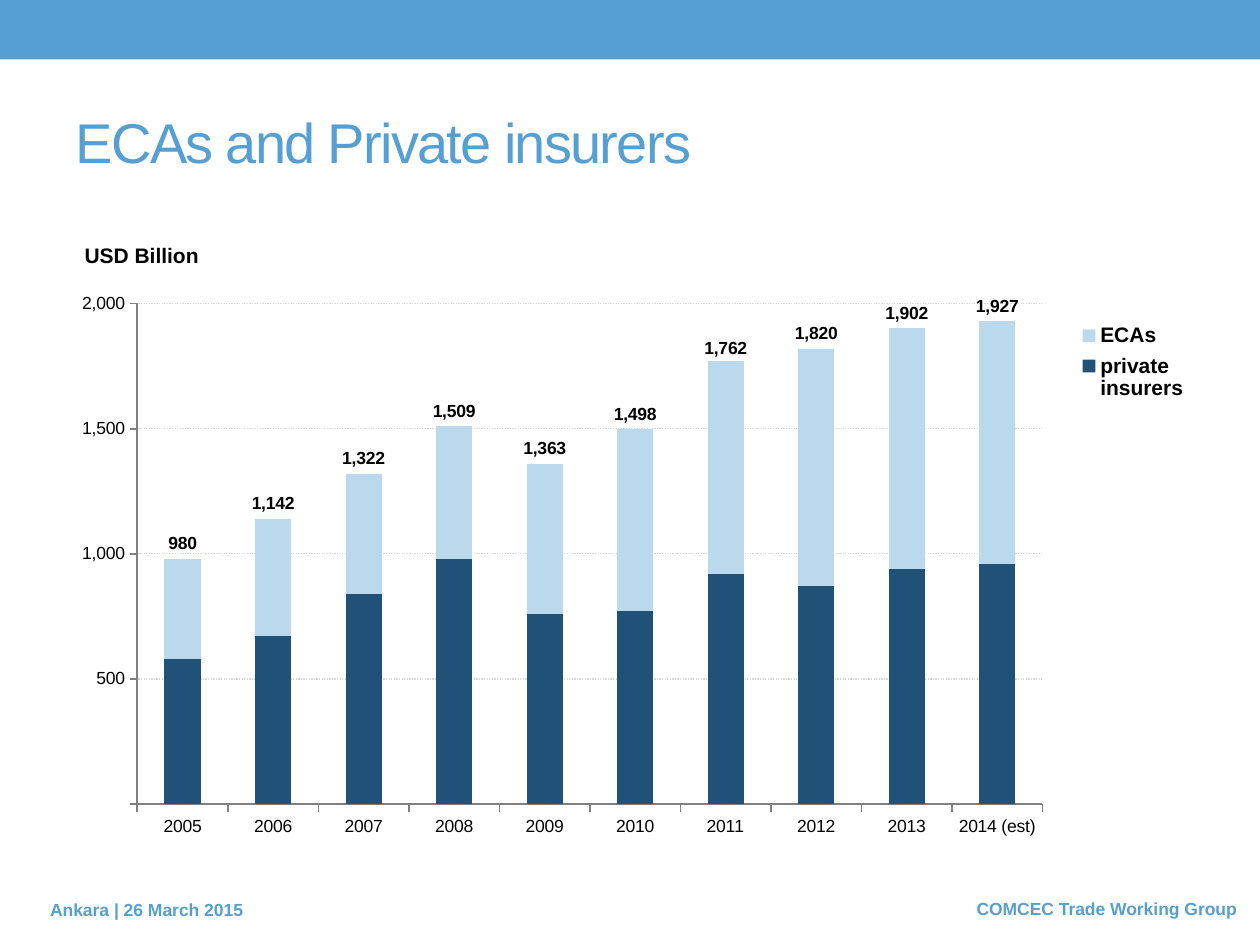
"""Build a slide with a stacked column chart of trade credit insured by ECAs and private insurers."""
from lxml.etree import SubElement
from pptx import Presentation
from pptx.chart.data import CategoryChartData
from pptx.dml.color import RGBColor
from pptx.enum.chart import XL_CHART_TYPE as ChartType, XL_LABEL_POSITION as LabelPosition
from pptx.enum.chart import XL_LEGEND_POSITION as LegendPosition, XL_MARKER_STYLE as MarkerStyle
from pptx.enum.chart import XL_TICK_MARK as TickMark
from pptx.enum.dml import MSO_LINE as LineStyle
from pptx.enum.shapes import MSO_SHAPE as ShapeType
from pptx.enum.text import MSO_ANCHOR as Anchor, PP_ALIGN as Align
from pptx.oxml import parse_xml
from pptx.oxml.ns import nsdecls, qn
from pptx.util import Cm, Pt

BLUE = RGBColor(0x56, 0x9F, 0xD3)
NAVY = RGBColor(0x1F, 0x52, 0x76)
PALE_BLUE = RGBColor(0xBB, 0xD9, 0xED)
BLACK = RGBColor(0, 0, 0)
AXIS_GRAY = RGBColor(0x80, 0x80, 0x80)
GRID_GRAY = RGBColor(0xD9, 0xD9, 0xD9)
NUMBER_FORMAT = "#,###,"


def write_text(frame, text, size, color=BLUE, bold=False, align=Align.LEFT, spacing=0):
    frame.word_wrap = True
    frame.vertical_anchor = Anchor.MIDDLE
    paragraph = frame.paragraphs[0]
    paragraph.alignment = align
    run = paragraph.add_run()
    run.text = text
    font = run.font
    font.name, font.size, font.bold = "Arial", Pt(size), bold
    font.color.rgb = color
    if spacing:
        run._r.get_or_add_rPr().set("spc", str(spacing))


def set_layout(element, inner=False, **box):
    for old_layout in element.findall(qn("c:layout")):
        element.remove(old_layout)
    layout = parse_xml(f"<c:layout {nsdecls('c')}><c:manualLayout/></c:layout>")
    if inner:
        SubElement(layout[0], qn("c:layoutTarget")).set("val", "inner")
    for mode in ("xMode", "yMode"):
        SubElement(layout[0], qn(f"c:{mode}")).set("val", "edge")
    for side, value in box.items():
        SubElement(layout[0], qn(f"c:{side}")).set("val", str(value))
    overlay = element.find(qn("c:overlay"))
    element.insert(0 if overlay is None else element.index(overlay), layout)


presentation = Presentation()
presentation.slide_width, presentation.slide_height = Cm(25.4), Cm(19.05)
slide = presentation.slides.add_slide(presentation.slide_layouts[5])

band = slide.shapes.add_shape(ShapeType.RECTANGLE, 0, 0, Cm(25.4), Cm(1.2))
band.shadow.inherit = False
band.fill.solid()
band.fill.fore_color.rgb = BLUE
band.line.fill.background()

title = slide.shapes.title
title.left, title.top, title.width, title.height = Cm(1.27), Cm(1.47), Cm(24.54), Cm(2.74)
write_text(title.text_frame, "ECAs and Private insurers", 32, spacing=-100)

footers = [
    ("Ankara | 26 March 2015", 0.76, 17.88, 8.05, Align.LEFT),
    ("COMCEC Trade Working Group", 10.57, 17.86, 14.61, Align.RIGHT),
]
for text, left, top, width, align in footers:
    box = slide.shapes.add_textbox(Cm(left), Cm(top), Cm(width), Cm(0.91))
    write_text(box.text_frame, text, 10, bold=True, align=align)

chart_data = CategoryChartData(number_format=NUMBER_FORMAT)
chart_data.categories = [str(year) for year in range(2005, 2014)] + ["2014 (est)"]
series_values = {
    "private insurers": (580, 670, 840, 980, 760, 770, 920, 870, 940, 960),
    "ECAs": (400, 470, 480, 530, 600, 730, 850, 950, 960, 970),
    "Series 3": (980, 1142, 1322, 1509, 1363, 1498, 1762, 1820, 1902, 1927),
}
for name, billions in series_values.items():
    chart_data.add_series(name, [value * 1000 for value in billions])
chart = slide.shapes.add_chart(
    ChartType.COLUMN_STACKED, Cm(1.4), Cm(3.89), Cm(22.81), Cm(13.11), chart_data
).chart
chart.has_title = False
chart.font.name, chart.font.size = "Arial", Pt(10)
chart.font.color.rgb = BLACK

columns = chart.plots[0]
columns.gap_width, columns.overlap = 150, 100
columns.vary_by_categories = False
for series, color in zip(columns.series, (NAVY, PALE_BLUE)):
    series.format.fill.solid()
    series.format.fill.fore_color.rgb = color

plot_area = chart._chartSpace.chart.plotArea
bar_chart = plot_area.find(qn("c:barChart"))
total_series = bar_chart.findall(qn("c:ser"))[2]
for bar_setting in total_series.findall(qn("c:invertIfNegative")):
    total_series.remove(bar_setting)
line_chart = parse_xml(
    f'<c:lineChart {nsdecls("c")}><c:grouping val="standard"/><c:varyColors val="0"/></c:lineChart>'
)
line_chart.append(total_series)
SubElement(line_chart, qn("c:marker")).set("val", "1")
for axis_id in bar_chart.findall(qn("c:axId")):
    SubElement(line_chart, qn("c:axId")).set("val", axis_id.get("val"))
bar_chart.addnext(line_chart)

totals = chart.plots[1].series[0]
totals.smooth = False
totals.format.line.fill.background()
totals.marker.style = MarkerStyle.NONE
labels = totals.data_labels
labels.show_value = True
labels.position = LabelPosition.ABOVE
labels.number_format, labels.number_format_is_linked = NUMBER_FORMAT, False
labels.font.name, labels.font.size, labels.font.bold = "Arial", Pt(10), True
labels.font.color.rgb = BLACK

category_axis, value_axis = chart.category_axis, chart.value_axis
for axis in (category_axis, value_axis):
    axis.major_tick_mark, axis.minor_tick_mark = TickMark.OUTSIDE, TickMark.NONE
    axis.tick_labels.font.size = Pt(10)
    axis.format.line.color.rgb = AXIS_GRAY
    axis.format.line.width = Pt(1)
value_axis.minimum_scale, value_axis.maximum_scale = 0, 2000000
value_axis.major_unit = 500000
value_axis.tick_labels.number_format = NUMBER_FORMAT
value_axis.tick_labels.number_format_is_linked = False
grid_line = value_axis.major_gridlines.format.line
grid_line.color.rgb = GRID_GRAY
grid_line.width = Pt(0.75)
grid_line.dash_style = LineStyle.ROUND_DOT

axis_title = value_axis.axis_title
write_text(axis_title.text_frame, "USD Billion", 12, color=BLACK, bold=True)
axis_title.text_frame._txBody.bodyPr.set("rot", "0")
axis_title.text_frame._txBody.bodyPr.set("vert", "horz")

chart.has_legend = True
legend = chart.legend
legend.position = LegendPosition.CORNER
legend.include_in_layout = False
legend.font.name, legend.font.size, legend.font.bold = "Arial", Pt(12), True
legend.font.color.rgb = BLACK
hidden_entry = parse_xml(
    f'<c:legendEntry {nsdecls("c")}><c:idx val="2"/><c:delete val="1"/></c:legendEntry>'
)
legend._element.get_or_add_legendPos().addnext(hidden_entry)

set_layout(axis_title._element, x=0.01, y=0.07)
set_layout(legend._element, x=0.88, y=0.19, w=0.12, h=0.14)
set_layout(plot_area, inner=True, x=0.06, y=0.17, w=0.8, h=0.77)

presentation.save("out.pptx")
